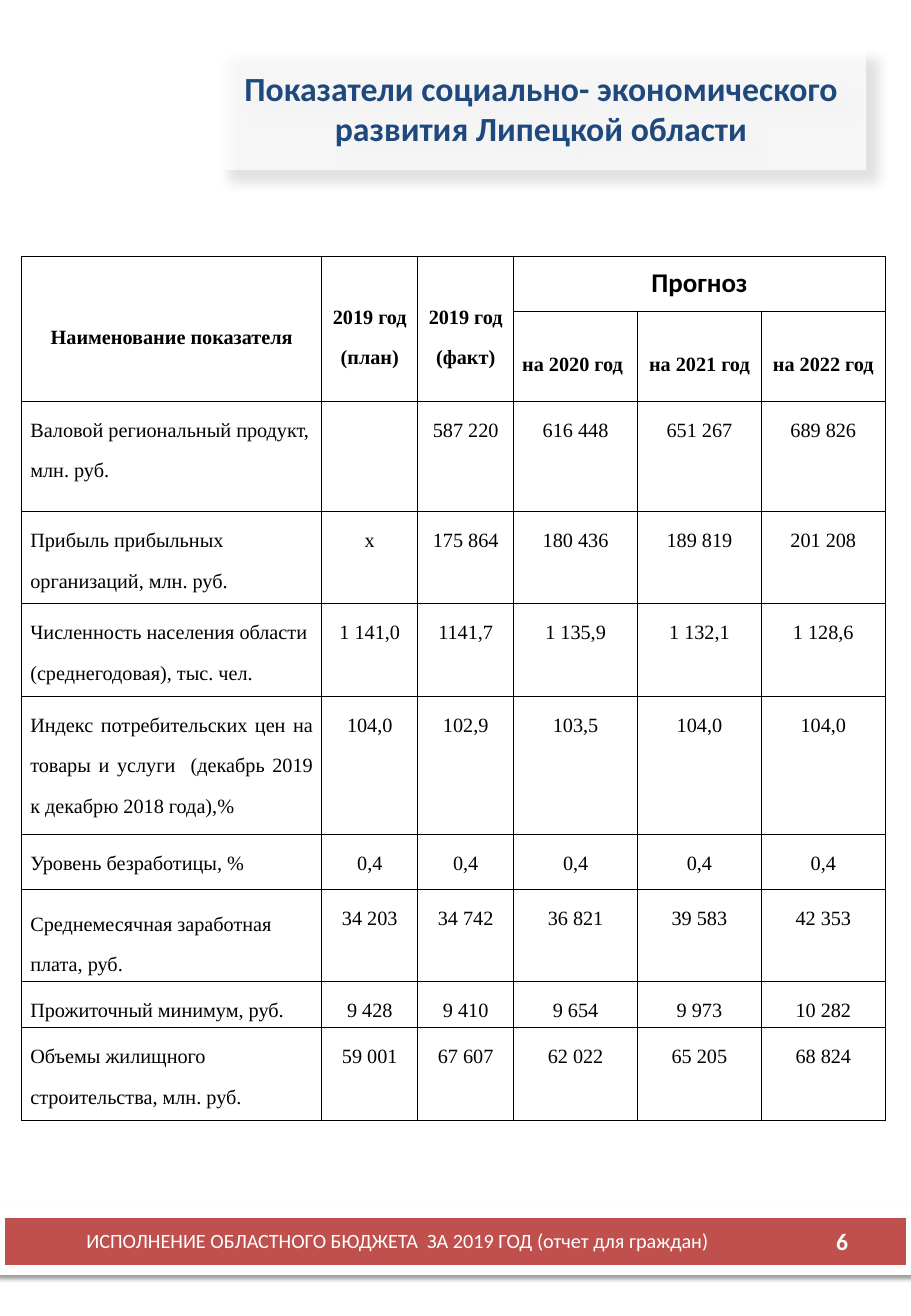
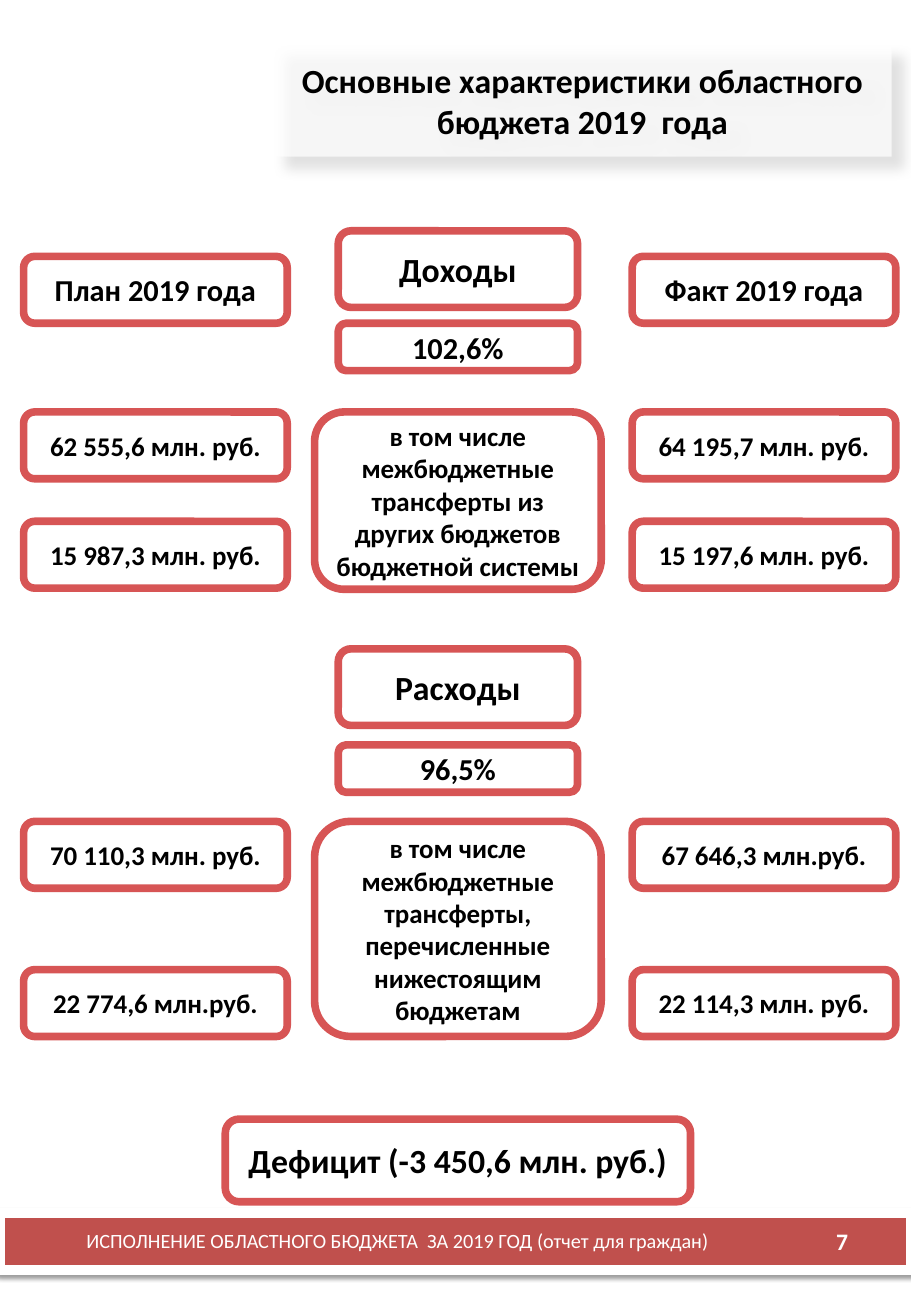
"""Two portrait pages of a regional budget report: an indicator table and a budget overview."""
from lxml import etree
from pptx import Presentation
from pptx.dml.color import RGBColor
from pptx.enum import shapes, text
from pptx.oxml import ns
from pptx.util import Inches, Pt

BLACK = RGBColor(0, 0, 0)
WHITE = RGBColor(255, 255, 255)
NAVY = RGBColor(0x1F, 0x49, 0x7D)
BRICK = RGBColor(0xC0, 0x50, 0x4D)
CORAL = RGBColor(0xD7, 0x55, 0x55)
SANS, SERIF = "Calibri", "Times New Roman"
LEFT, CENTER, RIGHT, JUSTIFY = (
    text.PP_ALIGN.LEFT, text.PP_ALIGN.CENTER, text.PP_ALIGN.RIGHT, text.PP_ALIGN.JUSTIFY)
MIDDLE, TOP = text.MSO_ANCHOR.MIDDLE, text.MSO_ANCHOR.TOP

FOOTER = "ИСПОЛНЕНИЕ ОБЛАСТНОГО БЮДЖЕТА  ЗА 2019 ГОД (отчет для граждан)"

INDICATORS_TITLE = "Показатели социально- экономического развития Липецкой области"
COLUMN_WIDTHS = [2.47, 0.79, 0.79, 1.02, 1.02, 1.02]
ROW_HEIGHTS = [0.45, 0.74, 0.91, 0.76, 0.76, 1.14, 0.45, 0.76, 0.38, 0.76]
FORECAST = "Прогноз"
INDICATOR_HEADS = ["Наименование показателя", "2019 год (план)", "2019 год (факт)"]
FORECAST_HEADS = ["на 2020 год", "на 2021 год", "на 2022 год"]
INDICATORS = [
    ("Валовой региональный продукт, млн. руб.", LEFT, TOP,
     ["", "587 220", "616 448", "651 267", "689 826"]),
    ("Прибыль прибыльных организаций, млн. руб.", LEFT, TOP,
     ["х", "175 864", "180 436", "189 819", "201 208"]),
    ("Численность населения области (среднегодовая), тыс. чел.", LEFT, TOP,
     ["1 141,0", "1141,7", "1 135,9", "1 132,1", "1 128,6"]),
    ("Индекс потребительских цен на товары и услуги  (декабрь 2019 к декабрю 2018 года),%",
     JUSTIFY, TOP, ["104,0", "102,9", "103,5", "104,0", "104,0"]),
    ("Уровень безработицы, %", JUSTIFY, TOP, ["0,4", "0,4", "0,4", "0,4", "0,4"]),
    ("Среднемесячная заработная плата, руб.", LEFT, MIDDLE,
     ["34 203", "34 742", "36 821", "39 583", "42 353"]),
    ("Прожиточный минимум, руб.", JUSTIFY, TOP,
     ["9 428", "9 410", "9 654", "9 973", "10 282"]),
    ("Объемы жилищного строительства, млн. руб.", LEFT, TOP,
     ["59 001", "67 607", "62 022", "65 205", "68 824"]),
]

BUDGET_TITLE = "Основные характеристики областного бюджета 2019  года"
COLUMN_CENTERS = {"plan": 1.28, "middle": 3.77, "fact": 6.29}
BOX_STYLES = {
    "heading": (1.97, 0.63, 20),
    "percent": (1.97, 0.39, 18),
    "period": (2.17, 0.55, 18),
    "amount": (2.17, 0.55, 16),
    "transfers in": (2.36, 1.46, 16),
    "transfers out": (2.36, 1.77, 16),
    "deficit": (3.83, 0.68, 20),
}
BUDGET_BOXES = [
    ("middle", 1.9, "heading", "Доходы"),
    ("plan", 2.11, "period", "План 2019 года"),
    ("fact", 2.11, "period", "Факт 2019 года"),
    ("middle", 2.66, "percent", "102,6%"),
    ("plan", 3.39, "amount", "62 555,6 млн. руб."),
    ("middle", 3.39, "transfers in",
     "в том числе межбюджетные трансферты из других бюджетов бюджетной системы"),
    ("fact", 3.39, "amount", "64 195,7 млн. руб."),
    ("plan", 4.29, "amount", "15 987,3 млн. руб."),
    ("fact", 4.29, "amount", "15 197,6 млн. руб."),
    ("middle", 5.34, "heading", "Расходы"),
    ("middle", 6.13, "percent", "96,5%"),
    ("plan", 6.76, "amount", "70 110,3 млн. руб."),
    ("middle", 6.76, "transfers out",
     "в том числе межбюджетные трансферты, перечисленные нижестоящим бюджетам"),
    ("fact", 6.76, "amount", "67 646,3 млн.руб."),
    ("plan", 7.98, "amount", "22 774,6 млн.руб."),
    ("fact", 7.98, "amount", "22 114,3 млн. руб."),
    ("middle", 9.21, "deficit", "Дефицит (-3 450,6 млн. руб.)"),
]


def write(frame, wording, size, color=BLACK, bold=True, align=CENTER, font=SANS):
    frame.text = wording
    paragraph = frame.paragraphs[0]
    paragraph.alignment = align
    style = paragraph.font
    style.name, style.size, style.bold = font, Pt(size), bold
    style.color.rgb = color
    return paragraph


def fit(frame):
    frame.word_wrap = True
    frame.auto_size = text.MSO_AUTO_SIZE.NONE
    frame.vertical_anchor = MIDDLE


def cast_shadow(shape, alpha, blur, distance, angle):
    shape.shadow.inherit = False
    effects = shape.element.spPr.find(ns.qn("a:effectLst"))
    shadow = etree.SubElement(
        effects, ns.qn("a:outerShdw"), blurRad=str(Pt(blur)), dist=str(Pt(distance)),
        dir=str(angle * 60000), algn="ctr", rotWithShape="0")
    color = etree.SubElement(shadow, ns.qn("a:srgbClr"), val=str(BLACK))
    etree.SubElement(color, ns.qn("a:alpha"), val=str(alpha * 1000))


def add_band(layout, slide):
    band = slide.shapes.add_shape(
        shapes.MSO_SHAPE.RECTANGLE, 0, Inches(9.98), Inches(7.5), Inches(0.47))
    band.fill.solid()
    band.fill.fore_color.rgb = BRICK
    band.line.color.rgb = WHITE
    band.line.width = Pt(6)
    cast_shadow(band, 38, 3.1, 1.6, 90)
    layout.shapes.element.append(band.element)


def add_footer(slide, number):
    for left, width, wording, size, bold, align in (
            (0.36, 5.83, FOOTER, 12, False, CENTER),
            (6.43, 0.65, str(number), 14, True, RIGHT)):
        note = slide.shapes.add_textbox(
            Inches(left), Inches(10.06), Inches(width), Inches(0.3))
        fit(note.text_frame)
        write(note.text_frame, wording, size, WHITE, bold, align)


def set_title(slide, wording, place, color):
    title = slide.shapes.title
    title.left, title.top, title.width, title.height = map(Inches, place)
    title.fill.solid()
    title.fill.fore_color.rgb = WHITE
    tint = title.element.spPr.find(".//" + ns.qn("a:srgbClr"))
    etree.SubElement(tint, ns.qn("a:alpha"), val="70000")
    cast_shadow(title, 16, 7, 10, 45)
    fit(title.text_frame)
    write(title.text_frame, wording, 20, color)


def set_borders(cell):
    properties = cell._tc.get_or_add_tcPr()
    for place, side in enumerate(("lnL", "lnR", "lnT", "lnB")):
        border = etree.Element(ns.qn("a:" + side), w=str(Pt(0.5)))
        paint = etree.SubElement(border, ns.qn("a:solidFill"))
        etree.SubElement(paint, ns.qn("a:srgbClr"), val=str(BLACK))
        properties.insert(place, border)


def fill_cell(cell, wording, bold=False, align=CENTER, anchor=TOP):
    cell.vertical_anchor = anchor
    write(cell.text_frame, wording, 12, bold=bold, align=align, font=SERIF).line_spacing = Pt(24)


def add_indicators(slide):
    table = slide.shapes.add_table(
        len(ROW_HEIGHTS), len(COLUMN_WIDTHS), Inches(0.18), Inches(2.11),
        Inches(sum(COLUMN_WIDTHS)), Inches(sum(ROW_HEIGHTS))).table
    table.first_row = table.horz_banding = False
    for column, width in zip(table.columns, COLUMN_WIDTHS):
        column.width = Inches(width)
    for row, height in zip(table.rows, ROW_HEIGHTS):
        row.height = Inches(height)
        for cell in row.cells:
            cell.margin_left = cell.margin_right = Inches(0.07)
            cell.margin_top = cell.margin_bottom = 0
            cell.fill.background()
            set_borders(cell)

    for column, head in enumerate(INDICATOR_HEADS):
        table.cell(0, column).merge(table.cell(1, column))
        fill_cell(table.cell(0, column), head, True, anchor=MIDDLE)
    forecast = table.cell(0, 3)
    forecast.merge(table.cell(0, 5))
    forecast.vertical_anchor = MIDDLE
    write(forecast.text_frame, FORECAST, 16)
    for column, head in enumerate(FORECAST_HEADS, 3):
        fill_cell(table.cell(1, column), head, True, LEFT if column == 3 else CENTER, MIDDLE)

    for row, (indicator, align, anchor, values) in enumerate(INDICATORS, 2):
        fill_cell(table.cell(row, 0), indicator, align=align, anchor=anchor)
        for column, value in enumerate(values, 1):
            fill_cell(table.cell(row, column), value)


def add_budget_box(slide, column, top, style, wording):
    width, height, size = BOX_STYLES[style]
    box = slide.shapes.add_shape(
        shapes.MSO_SHAPE.ROUNDED_RECTANGLE, Inches(COLUMN_CENTERS[column] - width / 2),
        Inches(top), Inches(width), Inches(height))
    box.fill.background()
    box.line.color.rgb = CORAL
    box.line.width = Pt(4.5)
    box.shadow.inherit = False
    fit(box.text_frame)
    write(box.text_frame, wording, size)


def main():
    deck = Presentation()
    deck.slide_width, deck.slide_height = Inches(7.5), Inches(10.83)
    layout = deck.slide_layouts[5]
    indicators, budget = (deck.slides.add_slide(layout) for _ in range(2))
    add_band(layout, indicators)
    for number, slide in enumerate((indicators, budget), 6):
        add_footer(slide, number)
    set_title(indicators, INDICATORS_TITLE, (1.78, 0.38, 5.35, 1.02), NAVY)
    add_indicators(indicators)
    set_title(budget, BUDGET_TITLE, (2.25, 0.36, 5.09, 0.93), BLACK)
    for box in BUDGET_BOXES:
        add_budget_box(budget, *box)
    deck.save("out.pptx")


if __name__ == "__main__":
    main()
